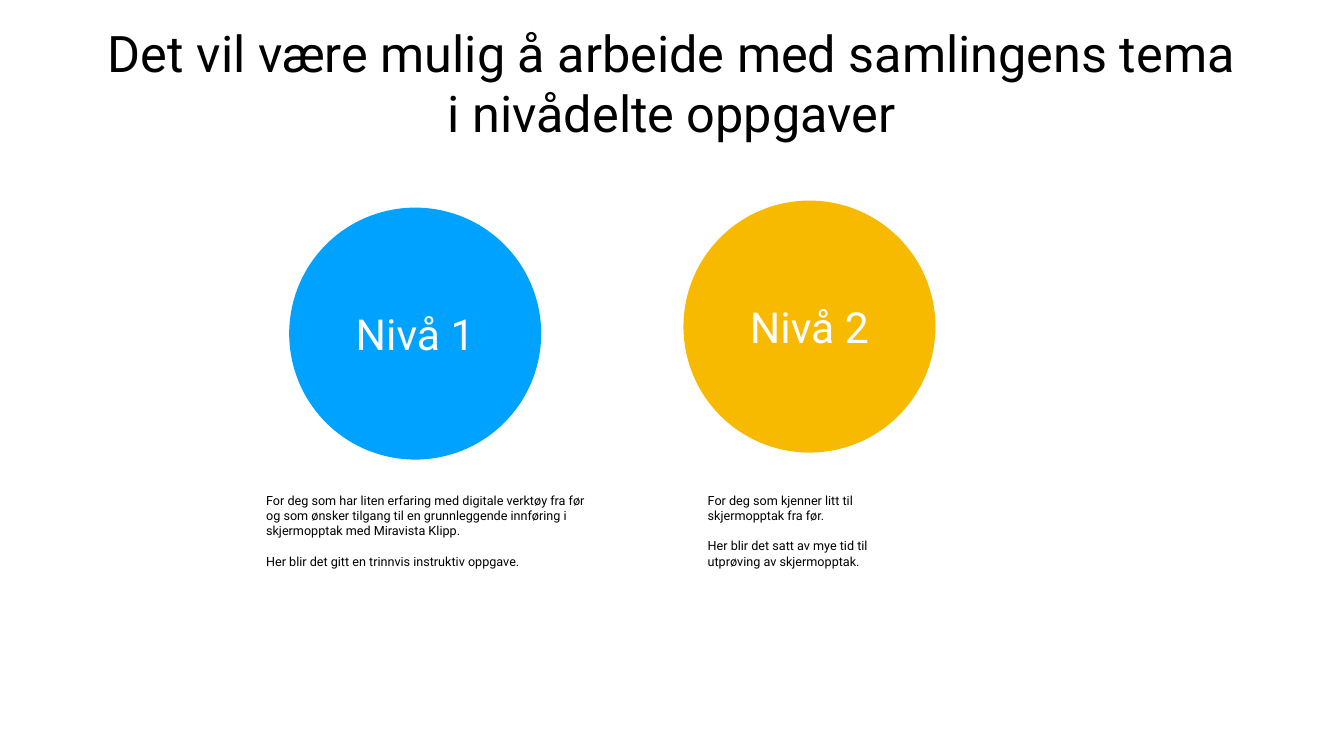
"""Build a slide that presents two task levels as coloured circles with notes."""
from pptx import Presentation
from pptx.dml.color import RGBColor as Color
from pptx.enum.shapes import MSO_SHAPE as Shape
from pptx.enum.text import MSO_ANCHOR as Anchor, MSO_AUTO_SIZE as Auto, PP_ALIGN as Align
from pptx.util import Pt

THEME = {
    "font": "Roboto",
    "ink": Color.from_string("000000"),
    "light": Color.from_string("FFFFFF"),
    "blue": Color.from_string("00A2FF"),
    "gold": Color.from_string("F7BA01"),
    "title": Pt(36),
    "label": Pt(30.5),
    "note": Pt(9),
}


def write(frame, lines, size, ink, align, anchor, inset, gap=0):
    frame.word_wrap = True
    frame.auto_size = Auto.NONE
    frame.vertical_anchor = anchor
    frame.margin_left = frame.margin_right = Pt(inset)
    frame.margin_top = frame.margin_bottom = Pt(inset)
    for i, line in enumerate(lines):
        para = frame.add_paragraph() if i else frame.paragraphs[0]
        para.alignment = align
        para.space_before = Pt(gap if i else 0)
        run = para.add_run()
        run.text = line
        run.font.name = THEME["font"]
        run.font.size = THEME[size]
        run.font.color.rgb = THEME[ink]


deck = Presentation()
deck.slide_width, deck.slide_height = Pt(960), Pt(540)
slide = deck.slides.add_slide(deck.slide_layouts[5])

title = slide.shapes.title
title.left, title.top, title.width, title.height = Pt(66.2), Pt(13.7), Pt(827.3), Pt(90)
write(title.text_frame, ["Det vil være mulig å arbeide med samlingens tema i nivådelte oppgaver"],
      "title", "ink", Align.CENTER, Anchor.MIDDLE, 4.3)

levels = [
    ("Nivå 1", "blue", 206.6, 148.3, 187.9, 237.6, [
        "For deg som har liten erfaring med digitale verktøy fra før og som ønsker "
        "tilgang til en grunnleggende innføring i skjermopptak med Miravista Klipp.",
        "Her blir det gitt en trinnvis instruktiv oppgave."]),
    ("Nivå 2", "gold", 488.2, 143.3, 503.3, 149.8, [
        "For deg som kjenner litt til skjermopptak fra før.",
        "Her blir det satt av mye tid til utprøving av skjermopptak."]),
]

for label, fill, left, top, edge, width, lines in levels:
    disc = slide.shapes.add_shape(Shape.OVAL, Pt(left), Pt(top), Pt(180), Pt(180))
    disc.shadow.inherit = False
    disc.fill.solid()
    disc.fill.fore_color.rgb = THEME[fill]
    disc.line.fill.background()
    write(disc.text_frame, [label], "label", "light", Align.CENTER, Anchor.MIDDLE, 0)

    note = slide.shapes.add_textbox(Pt(edge), Pt(349.9), Pt(width), Pt(180))
    write(note.text_frame, lines, "note", "ink", Align.LEFT, Anchor.TOP, 2.2, 10.8)

deck.save("out.pptx")
